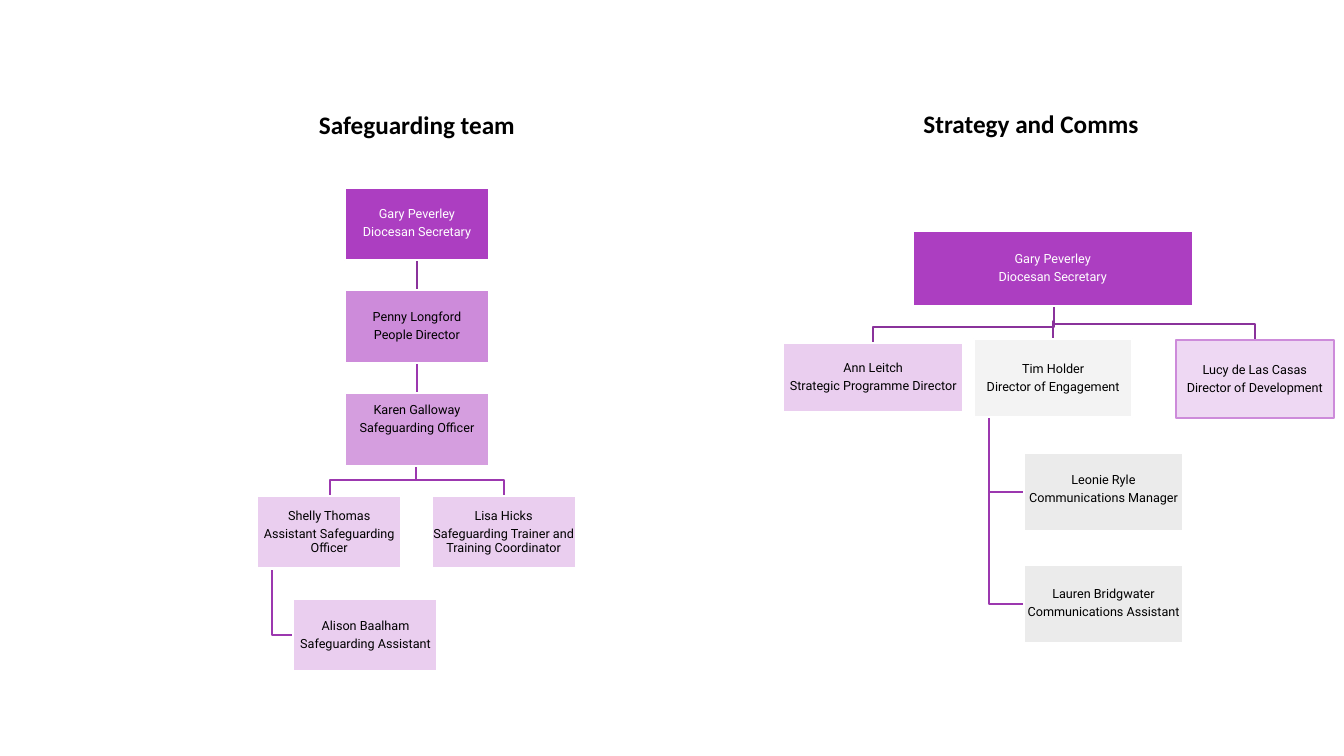
from lxml import etree
from pptx import Presentation
from pptx import util as u
from pptx.dml.color import RGBColor
from pptx.enum import shapes, text
from pptx.oxml import ns

BLACK = RGBColor(0x00, 0x00, 0x00)
WHITE = RGBColor(0xFF, 0xFF, 0xFF)
PURPLE = RGBColor(0xAC, 0x3E, 0xC1)
MID_PURPLE = RGBColor(0xCD, 0x8B, 0xDA)
PALE_PURPLE = RGBColor(0xEE, 0xD8, 0xF3)
LIGHT_GREY = RGBColor(0xD3, 0xD3, 0xD3)
GREY = RGBColor(0xB0, 0xB0, 0xB0)
PALE_GREY = RGBColor(0xEB, 0xEB, 0xEB)
DARK_LINE = RGBColor(0x8A, 0x32, 0x9B)
LINE = RGBColor(0x9C, 0x38, 0xAF)


class OrgChart:
    heading_font = "Calibri"
    box_font = "Roboto"
    line_width = u.Pt(1.5)

    def __init__(self, slide):
        self.slide = slide

    def add_words(self, paragraph, words, font, size, color, bold=False):
        paragraph.alignment = text.PP_ALIGN.CENTER
        run = paragraph.add_run()
        run.text = words
        run.font.name = font
        run.font.size = u.Pt(size)
        run.font.bold = bold
        run.font.color.rgb = color

    def heading(self, shape, left, words):
        shape.left, shape.top = u.Inches(left), u.Inches(1.03)
        shape.width, shape.height = u.Inches(6.69), u.Inches(0.4)
        frame = shape.text_frame
        frame.word_wrap = True
        frame.vertical_anchor = text.MSO_ANCHOR.TOP
        frame.auto_size = text.MSO_AUTO_SIZE.SHAPE_TO_FIT_TEXT
        self.add_words(frame.paragraphs[0], words, self.heading_font, 18, BLACK, True)

    def box(self, left, top, width, height, name, role, fill, opacity=100,
            color=BLACK, outline=WHITE, bottom=0.01):
        """Draw one person; a larger bottom inset lifts the text."""
        shape = self.slide.shapes.add_shape(
            shapes.MSO_SHAPE.RECTANGLE,
            *(u.Inches(value) for value in (left, top, width, height)))
        shape.shadow.inherit = False
        shape.fill.solid()
        shape.fill.fore_color.rgb = fill
        if opacity < 100:
            fill_color = shape._element.spPr.find(
                ns.qn("a:solidFill") + "/" + ns.qn("a:srgbClr"))
            etree.SubElement(fill_color, ns.qn("a:alpha"), val=str(opacity * 1000))
        shape.line.color.rgb = outline
        shape.line.width = self.line_width
        frame = shape.text_frame
        frame.word_wrap = True
        frame.vertical_anchor = text.MSO_ANCHOR.MIDDLE
        frame.margin_left = frame.margin_right = frame.margin_top = u.Inches(0.01)
        frame.margin_bottom = u.Inches(bottom)
        for paragraph, words in ((frame.paragraphs[0], name),
                                 (frame.add_paragraph(), role)):
            paragraph.line_spacing = 0.9
            paragraph.space_after = u.Pt(3.15)
            self.add_words(paragraph, words, self.box_font, 9, color)
        return shape

    def straight(self, x, top, bottom, color):
        connector = self.slide.shapes.add_connector(
            shapes.MSO_CONNECTOR.STRAIGHT, u.Inches(x), u.Inches(top),
            u.Inches(x), u.Inches(bottom))
        connector.line.color.rgb = color
        connector.line.width = self.line_width
        etree.SubElement(connector._element.spPr, ns.qn("a:effectLst"))
        return connector

    def polyline(self, points, color):
        start, *others = [(u.Inches(x), u.Inches(y)) for x, y in points]
        builder = self.slide.shapes.build_freeform(*start)
        builder.add_line_segments(others, close=False)
        shape = builder.convert_to_shape()
        shape.shadow.inherit = False
        shape.fill.background()
        shape.line.color.rgb = color
        shape.line.width = self.line_width

    def branch(self, x, top, bend, end_x, end_y, color):
        """Run down to the bend, across, then down to the end."""
        self.polyline([(x, top), (x, bend), (end_x, bend), (end_x, end_y)], color)

    def hang(self, x, top, end_x, end_y):
        """Run down the left edge, then across to a box side."""
        self.polyline([(x, top), (x, end_y), (end_x, end_y)], LINE)


def safeguarding_team(chart):
    width, height, left, center = 1.43, 0.72, 3.42, 4.13
    rows = [1.86 + 1.02 * row for row in range(5)]
    for end_x in (3.27, 5):
        chart.branch(center, rows[2] + height, 4.76, end_x, rows[3], LINE)
    chart.hang(2.7, rows[3] + height, 2.91, rows[4] + height / 2)
    links = [chart.straight(center, rows[row] + height, rows[row + 1], color)
             for row, color in enumerate((DARK_LINE, LINE))]

    column = [
        chart.box(left, rows[0], width, height, "Gary Peverley",
                  "Diocesan Secretary", PURPLE, color=WHITE),
        chart.box(left, rows[1], width, height, "Penny Longford",
                  "People Director", MID_PURPLE),
        chart.box(left, rows[2], width, height, "Karen Galloway",
                  "Safeguarding Officer", PURPLE, 50, bottom=0.21),
    ]
    for link, upper, lower in zip(links, column, column[1:]):
        link.begin_connect(upper, 2)
        link.end_connect(lower, 0)

    for box_left, row, name, role in (
            (2.55, 3, "Shelly Thomas", "Assistant Safeguarding Officer"),
            (2.91, 4, "Alison Baalham", "Safeguarding Assistant"),
            (4.28, 3, "Lisa Hicks", "Safeguarding Trainer and Training Coordinator")):
        chart.box(box_left, rows[row], width, height, name, role, PURPLE, 25)


def strategy_and_comms(chart):
    width, height = 1.57, 0.78
    for bend, end_x, end_y in ((3.21, 12.45, 3.37), (3.19, 10.44, 3.36),
                               (3.24, 8.66, 3.4)):
        chart.branch(10.45, 3.05, bend, end_x, end_y, DARK_LINE)
    for end_y in (5.99, 4.88):
        chart.hang(9.81, 4.14, 10.16, end_y)

    chart.box(9.05, 2.29, 2.78, 0.75, "Gary Peverley", "Diocesan Secretary",
              PURPLE, color=WHITE)
    chart.box(7.77, 3.4, 1.78, 0.69, "Ann Leitch",
              "Strategic Programme Director", PURPLE, 25)
    chart.box(9.66, 3.36, width, height, "Tim Holder",
              "Director of Engagement", LIGHT_GREY, 25)
    chart.box(10.16, 4.49, width, height, "Leonie Ryle",
              "Communications Manager", GREY, 25, bottom=0.06)
    chart.box(10.16, 5.6, width, height, "Lauren Bridgwater",
              "Communications Assistant", PALE_GREY)
    chart.box(11.66, 3.37, width, height, "Lucy de Las Casas",
              "Director of Development", PALE_PURPLE, outline=MID_PURPLE)


def main():
    presentation = Presentation()
    presentation.slide_width = u.Inches(13.33)
    presentation.slide_height = u.Inches(7.5)
    slide = presentation.slides.add_slide(presentation.slide_layouts[5])
    chart = OrgChart(slide)
    chart.heading(slide.shapes.title, 0.79, "Safeguarding team")
    chart.heading(slide.shapes.add_textbox(0, 0, 0, 0), 6.88, "Strategy and Comms")
    safeguarding_team(chart)
    strategy_and_comms(chart)
    presentation.save("out.pptx")


if __name__ == "__main__":
    main()
